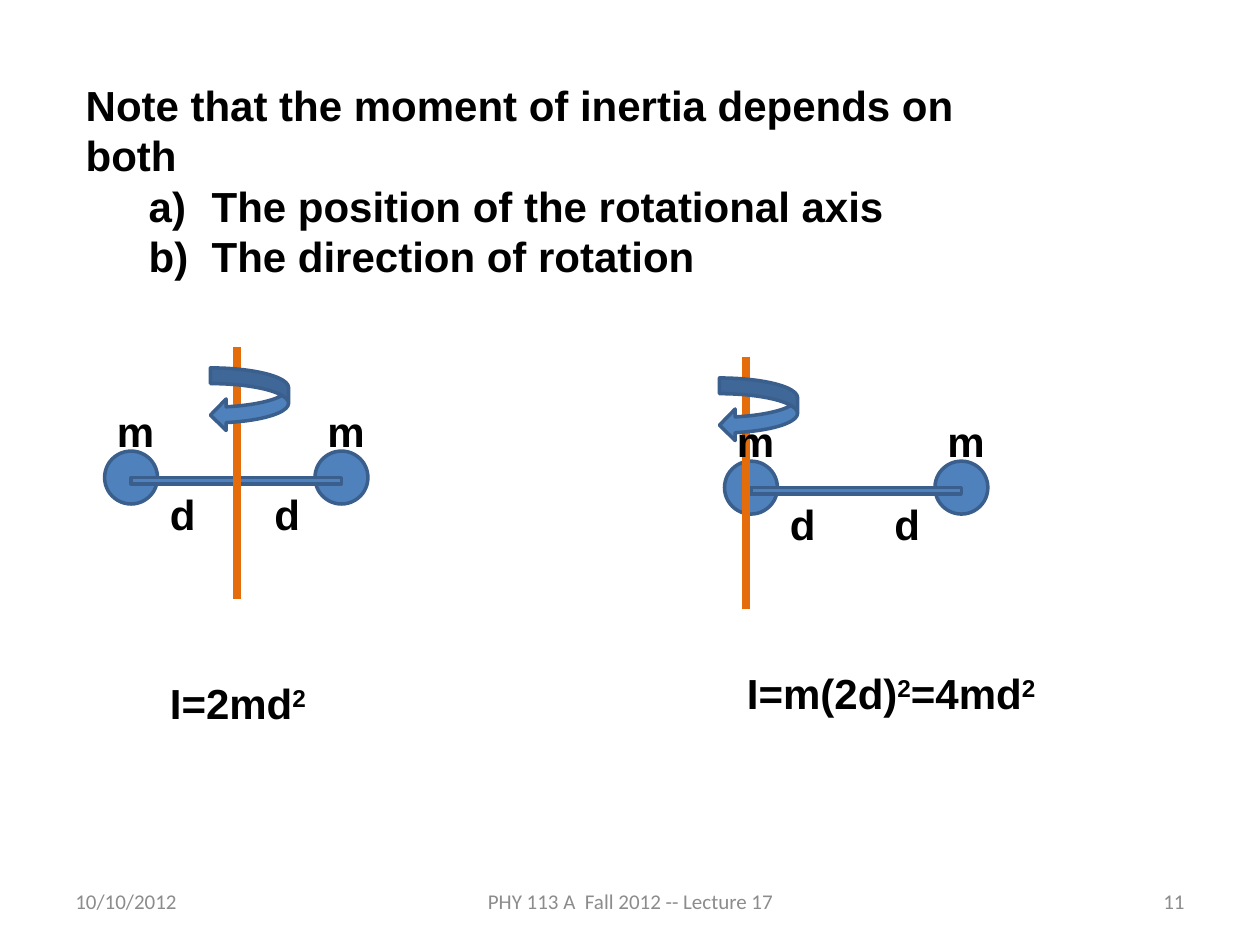
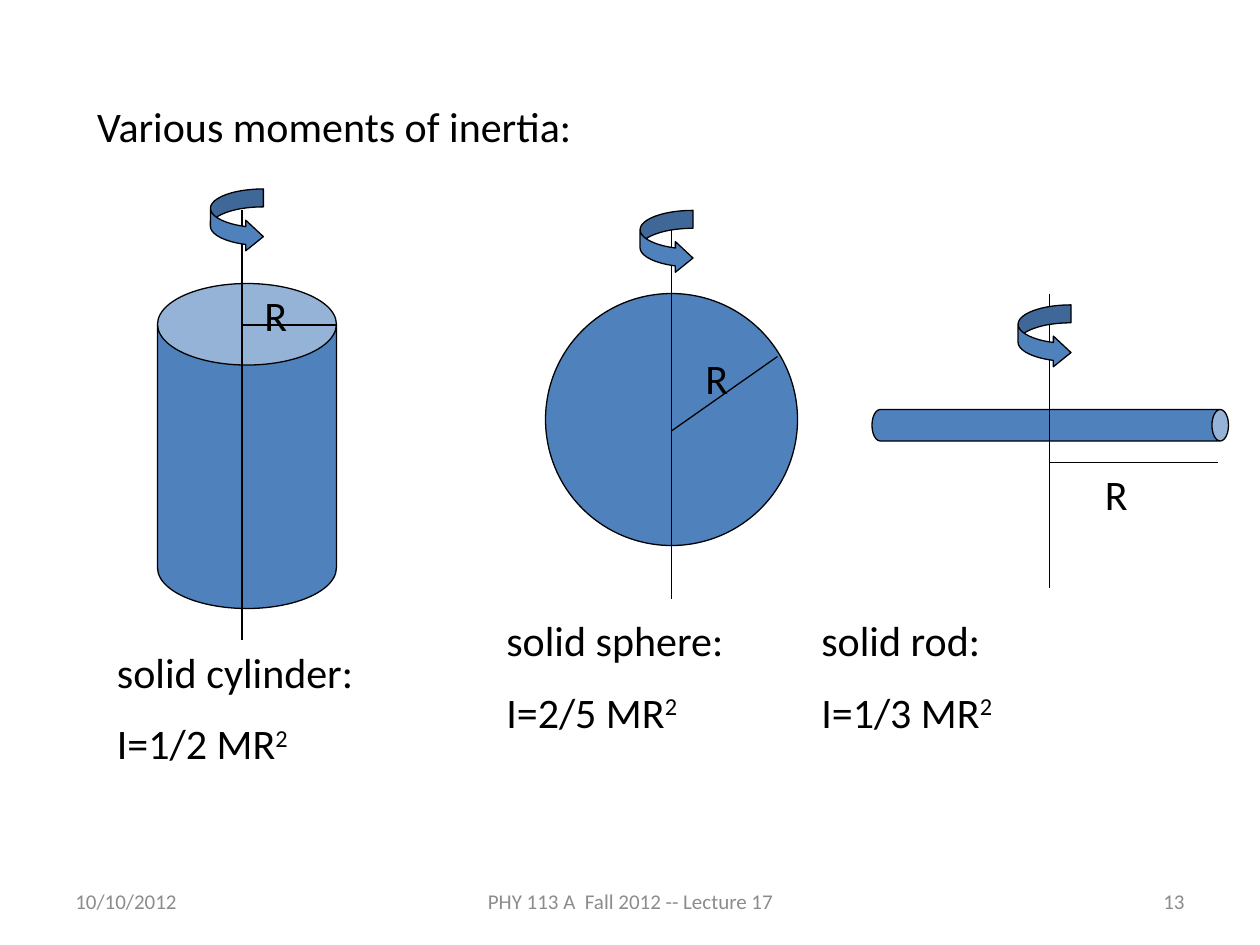
"""Builds two lecture slides on moments of inertia."""
from lxml import etree
from pptx import Presentation
from pptx import util as u
from pptx.dml.color import RGBColor
from pptx.enum import shapes, text
from pptx.oxml.ns import qn

BLACK = RGBColor(0x00, 0x00, 0x00)
GREY = RGBColor(0x8C, 0x8C, 0x8C)
BLUE = RGBColor(0x4F, 0x81, 0xBD)
DARK_BLUE = RGBColor(0x3A, 0x5F, 0x8C)
ORANGE = RGBColor(0xE4, 0x6C, 0x0A)
LEFT, CENTER, RIGHT = text.PP_ALIGN.LEFT, text.PP_ALIGN.CENTER, text.PP_ALIGN.RIGHT
SHAPE = shapes.MSO_SHAPE

DATE = "10/10/2012"
LECTURE = "PHY 113 A  Fall 2012 -- Lecture 17"

NOTE = "Note that the moment of inertia depends on both"
FACTORS = ["The position of the rotational axis", "The direction of rotation"]
DUMBBELLS = [
    {"corner": (0.83, 2.75), "axis": 1.88,
     "formula": "I=2md|2", "formula_at": (1.25, 5.33, 1.92, 0.5)},
    {"corner": (5.75, 2.83), "axis": 5.92,
     "formula": "I=m(2d)|2|=4md|2", "formula_at": (5.83, 5.25, 3.33, 0.5)},
]

HEADING = "Various moments of inertia:"
SOLIDS = [
    {"lines": ["solid cylinder:", "I=1/2 MR|2"], "caption": (0.83, 5.08),
     "kind": SHAPE.CAN, "body": (1.25, 2.25, 1.42, 2.58), "adjust": [0.456], "turn": 0,
     "axis": (1.92, 1.67, 1.92, 5.08), "arrow": (1.67, 1.5),
     "radius": (1.92, 2.58, 2.67, 2.58), "letter": (2, 2.25)},
    {"lines": ["solid sphere:", "I=2/5 MR|2"], "caption": (3.92, 4.83),
     "kind": SHAPE.OVAL, "body": (4.33, 2.33, 2, 2), "adjust": [], "turn": 0,
     "axis": (5.33, 1.75, 5.33, 4.75), "arrow": (5.08, 1.67),
     "radius": (5.33, 3.42, 6.17, 2.83), "letter": (5.5, 2.75)},
    {"lines": ["solid rod:", "I=1/3 MR|2"], "caption": (6.42, 4.83),
     "kind": SHAPE.CAN, "body": (8.21, 1.96, 0.25, 2.83), "adjust": [0.527], "turn": 90,
     "axis": (8.33, 2.33, 8.33, 4.67), "arrow": (8.08, 2.42),
     "radius": (8.33, 3.67, 9.67, 3.67), "letter": (8.67, 3.67)},
]
SOLID_ARROW = [0.339, 0.579, 0.333]


def inches(values):
    return [u.Inches(value) for value in values]


def style(paragraph, font, size=24, bold=False, color=BLACK, align=LEFT):
    paragraph.alignment = align
    for run in paragraph.runs:
        run.font.name, run.font.size, run.font.bold = font, u.Pt(size), bold
        run.font.color.rgb = color


def add_label(slide, place, lines, font, **look):
    """Write lines in a box; every second part between bars is superscript."""
    frame = slide.shapes.add_textbox(*inches(place)).text_frame
    frame.word_wrap = True
    for index, line in enumerate(lines):
        paragraph = frame.add_paragraph() if index else frame.paragraphs[0]
        if index:
            paragraph.space_before = u.Pt(12)
        for part, words in enumerate(line.split("|")):
            run = paragraph.add_run()
            run.text = words
            if part % 2:
                run.font._element.set("baseline", "30000")
        style(paragraph, font, **look)
    return frame


def add_solid(slide, kind, place, line, width, adjust=(), turn=0):
    solid = slide.shapes.add_shape(kind, *inches(place))
    solid.shadow.inherit = False
    solid.fill.solid()
    solid.fill.fore_color.rgb = BLUE
    solid.line.color.rgb, solid.line.width = line, u.Pt(width)
    solid.rotation = turn
    for index, value in enumerate(adjust):
        solid.adjustments[index] = value


def add_line(slide, ends, color, width):
    line = slide.shapes.add_connector(shapes.MSO_CONNECTOR.STRAIGHT, *inches(ends))
    line.line.color.rgb, line.line.width = color, u.Pt(width)
    etree.SubElement(line._element.spPr, qn("a:effectLst"))


def fill_placeholder(placeholder, place, lines, font, bold):
    placeholder.left, placeholder.top, placeholder.width, placeholder.height = inches(place)
    frame = placeholder.text_frame
    frame.text = "\n".join(lines)
    frame.word_wrap = True
    frame.auto_size = text.MSO_AUTO_SIZE.NONE
    frame.vertical_anchor = text.MSO_ANCHOR.TOP
    for paragraph in frame.paragraphs:
        paragraph.space_before = u.Pt(0)
        style(paragraph, font, bold=bold)
    return frame


def add_slide(deck, layout, number, title, place, font, bold=False):
    slide = deck.slides.add_slide(deck.slide_layouts[layout])
    fill_placeholder(slide.shapes.title, place, [title], font, bold)
    for words, left, width, align in [(DATE, 0.5, 2.33, LEFT), (LECTURE, 3.42, 3.17, CENTER),
                                      (number, 7.17, 2.33, RIGHT)]:
        footer = add_label(slide, (left, 6.95, width, 0.4), [words], "Calibri",
                           size=12, color=GREY, align=align)
        footer.vertical_anchor = text.MSO_ANCHOR.MIDDLE
    return slide


def add_factors(slide):
    frame = fill_placeholder(slide.placeholders[1], (0.58, 1.38, 7.58, 0.92),
                             FACTORS, "Arial", True)
    for paragraph in frame.paragraphs:
        paragraph.level = 1
        properties = paragraph._p.get_or_add_pPr()
        properties.set("marL", str(u.Inches(1)))
        properties.set("indent", str(u.Inches(-0.5)))
        etree.SubElement(properties, qn("a:buFont"), typeface="+mj-lt")
        etree.SubElement(properties, qn("a:buAutoNum"), type="alphaLcParenR")


def add_dumbbell(slide, dumbbell):
    left, top = dumbbell["corner"]
    axis = dumbbell["axis"]
    masses = [left, left + 1.67]
    for mass in masses:
        add_solid(slide, SHAPE.OVAL, (mass, top + 0.83, 0.42, 0.42), DARK_BLUE, 2)
    add_solid(slide, SHAPE.RECTANGLE, (left + 0.21, top + 1.04, 1.67, 0.05), DARK_BLUE, 2)
    add_line(slide, (axis, top, axis, top + 2), ORANGE, 5)
    for mass in masses:
        add_label(slide, (mass, top + 0.42, 0.42, 0.5), ["m"], "Arial", bold=True)
    for distance in (left + 0.42, left + 1.25):
        add_label(slide, (distance, top + 1.08, 0.42, 0.5), ["d"], "Arial", bold=True)
    add_solid(slide, SHAPE.CURVED_LEFT_ARROW, (axis - 0.21, top + 0.17, 0.62, 0.5), DARK_BLUE, 2)
    add_label(slide, dumbbell["formula_at"], [dumbbell["formula"]], "Arial", bold=True)


def add_rotating_solid(slide, solid):
    add_solid(slide, solid["kind"], solid["body"], BLACK, 0.75, solid["adjust"], solid["turn"])
    add_label(slide, (*solid["caption"], 3.33, 1.11), solid["lines"], "Calibri")
    add_line(slide, solid["axis"], BLACK, 0.75)
    add_solid(slide, SHAPE.CURVED_RIGHT_ARROW, (*solid["arrow"], 0.42, 0.5),
              BLACK, 0.75, SOLID_ARROW)
    add_label(slide, (*solid["letter"], 0.42, 0.5), ["R"], "Calibri")
    add_line(slide, solid["radius"], BLACK, 0.75)


def main():
    deck = Presentation()
    deck.slide_width, deck.slide_height = inches((10, 7.5))

    axes = add_slide(deck, 1, "11", NOTE, (0.58, 0.58, 7.58, 0.9), "Arial", bold=True)
    add_factors(axes)
    for dumbbell in DUMBBELLS:
        add_dumbbell(axes, dumbbell)

    moments = add_slide(deck, 5, "13", HEADING, (0.67, 0.75, 8.17, 0.5), "Calibri")
    for solid in SOLIDS:
        add_rotating_solid(moments, solid)

    deck.save("out.pptx")


if __name__ == "__main__":
    main()
